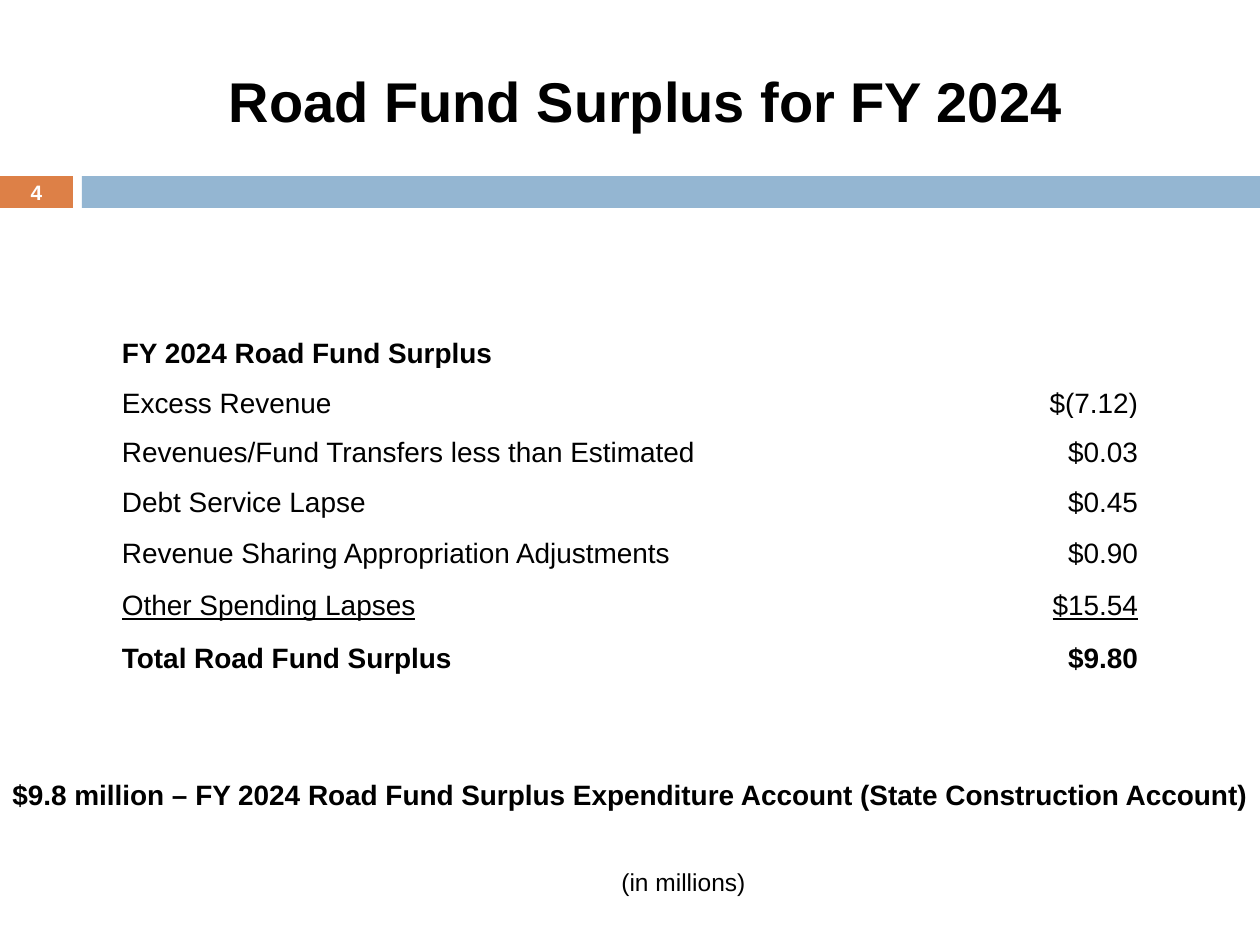
from dataclasses import dataclass

from pptx import Presentation
from pptx.dml.color import RGBColor
from pptx.enum.shapes import MSO_SHAPE
from pptx.enum.text import MSO_ANCHOR, PP_ALIGN
from pptx.util import Emu, Pt

RECTANGLE = MSO_SHAPE.RECTANGLE
LEFT, CENTER, RIGHT = PP_ALIGN.LEFT, PP_ALIGN.CENTER, PP_ALIGN.RIGHT
TOP, MIDDLE, BOTTOM = MSO_ANCHOR.TOP, MSO_ANCHOR.MIDDLE, MSO_ANCHOR.BOTTOM


@dataclass(frozen=True)
class Theme:
    font: str = "Arial"
    ink: RGBColor = RGBColor(0x00, 0x00, 0x00)
    white: RGBColor = RGBColor(0xFF, 0xFF, 0xFF)
    orange: RGBColor = RGBColor(0xDD, 0x80, 0x47)
    blue: RGBColor = RGBColor(0x94, 0xB6, 0xD2)
    title_size: float = 32
    body_size: float = 16
    unit_size: float = 14
    number_size: float = 11.9


THEME = Theme()

# Label, amount, bold, underlined
SURPLUS_ROWS = [
    ("FY 2024 Road Fund Surplus", "", True, False),
    ("Excess Revenue", "$(7.12)", False, False),
    ("Revenues/Fund Transfers less than Estimated", "$0.03", False, False),
    ("Debt Service Lapse", "$0.45", False, False),
    ("Revenue Sharing Appropriation Adjustments", "$0.90", False, False),
    ("Other Spending Lapses", "$15.54", False, True),
    ("Total Road Fund Surplus", "$9.80", True, False),
]
ROW_HEIGHTS = [106, 50, 50, 50, 51, 52, 53]
COLUMN_WIDTHS = [606, 228, 184]


def px(length):
    return Emu(round(length * 914400 / 126))


def style_paragraph(paragraph, size, align=LEFT, color=THEME.ink, bold=False, underline=False):
    paragraph.alignment = align
    font = paragraph.font
    font.name = THEME.font
    font.size = Pt(size)
    font.color.rgb = color
    font.bold = bold
    font.underline = underline


def add_bar(slide, left, top, width, height, color):
    bar = slide.shapes.add_shape(RECTANGLE, px(left), px(top), px(width), px(height))
    bar.shadow.inherit = False
    bar.fill.solid()
    bar.fill.fore_color.rgb = color
    bar.line.fill.background()


def add_text(slide, text, left, top, width, height, size, anchor=TOP, wrap=False, **style):
    frame = slide.shapes.add_textbox(px(left), px(top), px(width), px(height)).text_frame
    frame.word_wrap = wrap
    frame.vertical_anchor = anchor
    paragraph = frame.paragraphs[0]
    paragraph.text = text
    style_paragraph(paragraph, size, **style)


def fill_cell(cell, text, align, bold, underline):
    cell.fill.background()
    cell.vertical_anchor = BOTTOM
    cell.margin_left = cell.margin_right = cell.margin_top = px(1)
    cell.margin_bottom = 0
    cell.text = text
    style_paragraph(cell.text_frame.paragraphs[0], THEME.body_size, align,
                    bold=bold, underline=underline)


def add_surplus_table(slide, left, top):
    table = slide.shapes.add_table(
        len(SURPLUS_ROWS), len(COLUMN_WIDTHS), px(left), px(top),
        px(sum(COLUMN_WIDTHS)), px(sum(ROW_HEIGHTS))).table
    table.first_row = table.horz_banding = False
    for column, width in zip(table.columns, COLUMN_WIDTHS):
        column.width = px(width)
    for row, height, (label, amount, bold, underline) in zip(
            table.rows, ROW_HEIGHTS, SURPLUS_ROWS):
        row.height = px(height)
        for cell, text, align in zip(row.cells, (label, "", amount), (LEFT, LEFT, RIGHT)):
            fill_cell(cell, text, align, bold, underline)


def main():
    deck = Presentation()
    deck.slide_width, deck.slide_height = px(1260), px(945)
    slide = deck.slides.add_slide(deck.slide_layouts[6])

    # Header band, title and page number
    add_bar(slide, 0, 176, 73, 32, THEME.orange)
    add_bar(slide, 82, 176, 1178, 32, THEME.blue)
    add_text(slide, "Road Fund Surplus for FY 2024", 84, 32, 1124, 136,
             THEME.title_size, MIDDLE, wrap=True, align=CENTER, bold=True)
    add_text(slide, "4", 0, 175, 73, 34, THEME.number_size, MIDDLE, wrap=True,
             align=CENTER, color=THEME.white, bold=True)

    # Surplus breakdown
    add_surplus_table(slide, 121, 263)

    # Unit note and closing statement
    add_text(slide, "(in millions)", 609, 861, 150, 43, THEME.unit_size)
    add_text(slide, "$9.8 million – FY 2024 Road Fund Surplus Expenditure Account "
             "(State Construction Account)", 0, 771, 1276, 47, THEME.body_size, bold=True)

    deck.save("out.pptx")


if __name__ == "__main__":
    main()
